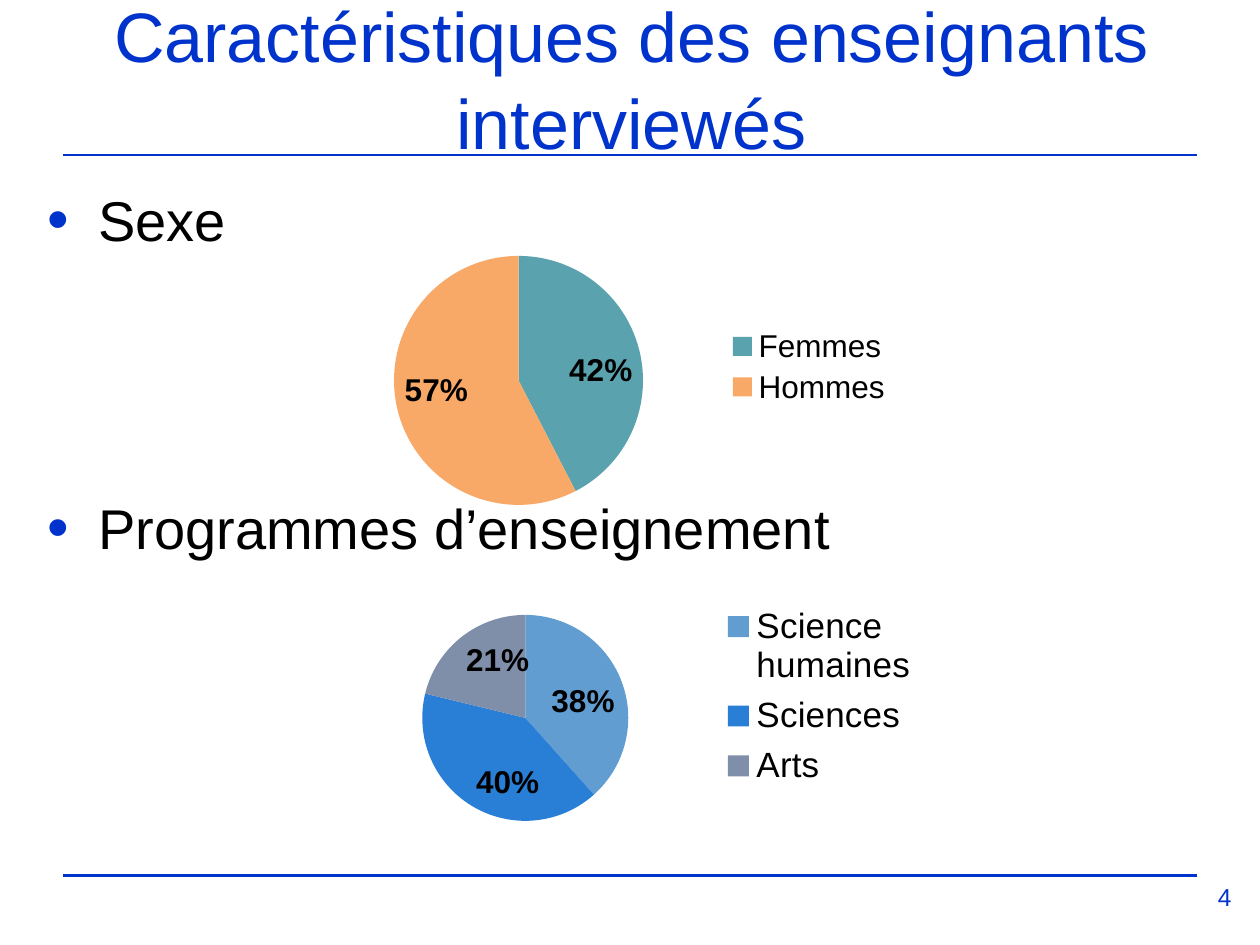
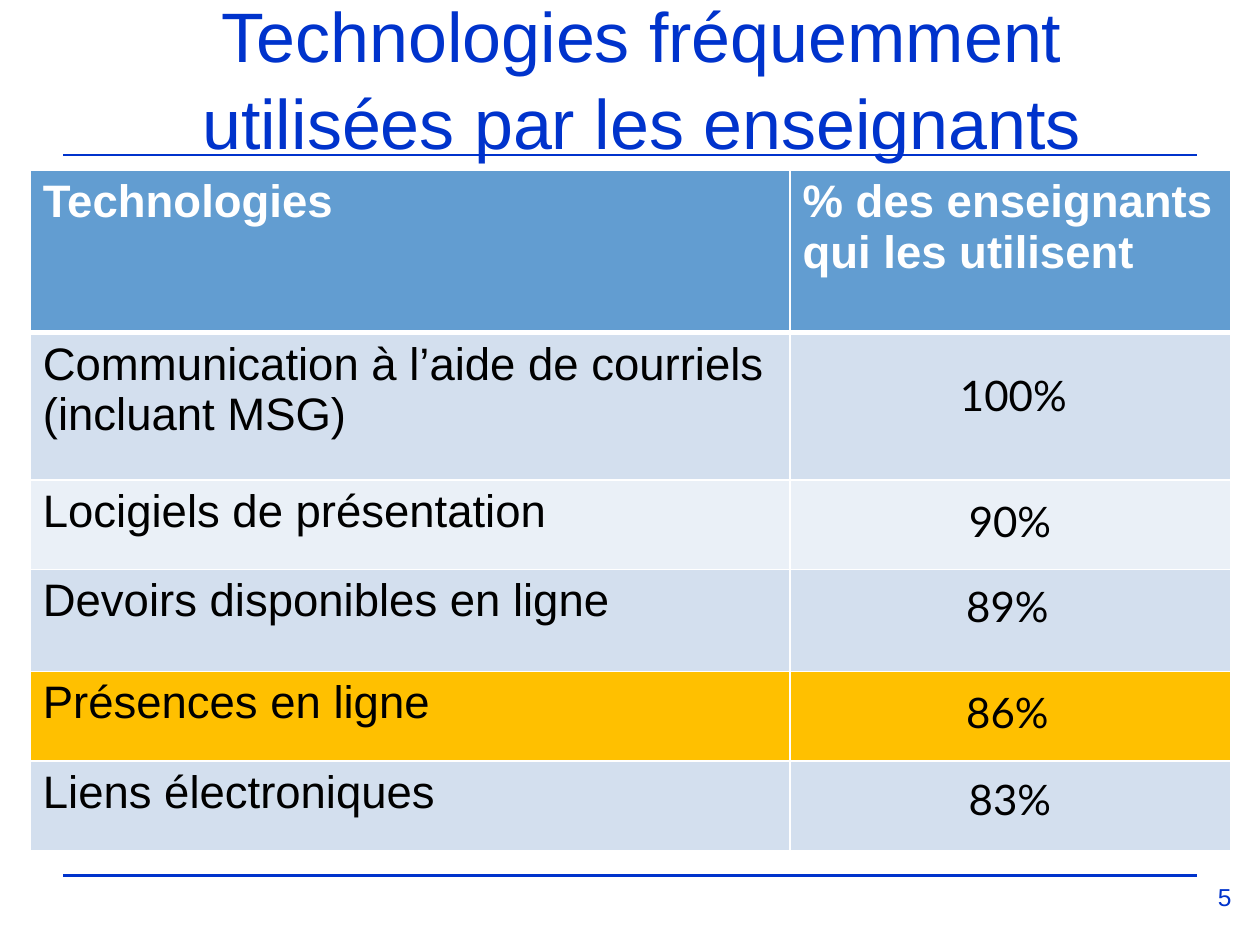
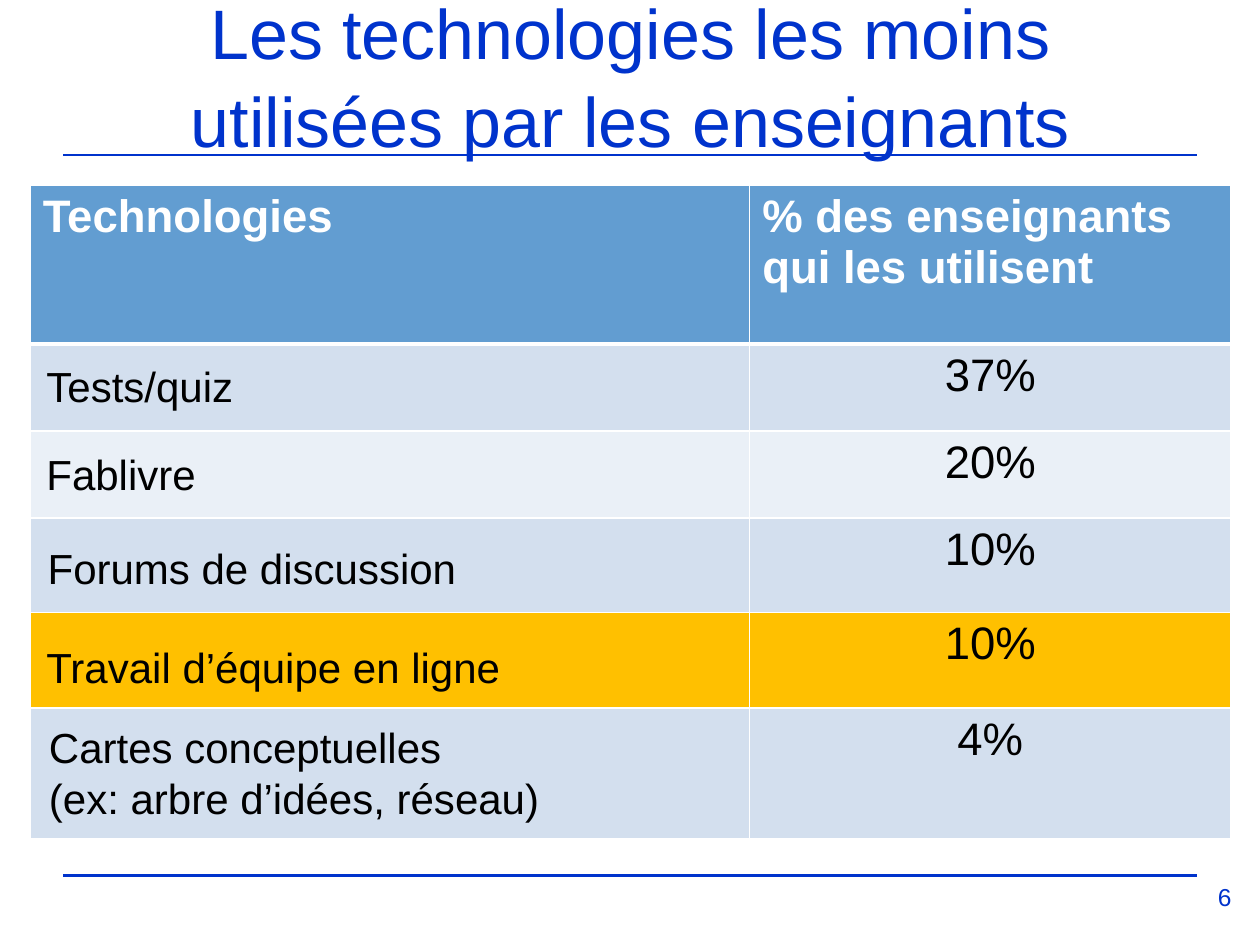
import pptx
import pptx.chart.data
import pptx.dml.color
import pptx.enum.chart
import pptx.enum.shapes
import pptx.enum.text
import pptx.oxml
import pptx.oxml.ns
import pptx.util
import lxml.etree

RGBColor = pptx.dml.color.RGBColor
Inches = pptx.util.Inches
Pt = pptx.util.Pt
qn = pptx.oxml.ns.qn
PP_ALIGN = pptx.enum.text.PP_ALIGN

ROYAL = RGBColor(0x00, 0x33, 0xCC)
BLACK = RGBColor(0x00, 0x00, 0x00)
WHITE = RGBColor(0xFF, 0xFF, 0xFF)
SKY = RGBColor(0x62, 0x9D, 0xD1)
BLUE = RGBColor(0x29, 0x7F, 0xD5)
SLATE = RGBColor(0x7F, 0x8F, 0xA9)
TEAL = RGBColor(0x5A, 0xA2, 0xAE)
PEACH = RGBColor(0xF8, 0xA9, 0x68)
BAND = RGBColor(0xD3, 0xDF, 0xEE)
PALE = RGBColor(0xEA, 0xF0, 0xF7)
GOLD = RGBColor(0xFF, 0xC0, 0x00)

ROW_FILLS = [SKY, BAND, PALE, BAND, GOLD, BAND]
HEADINGS = ("Technologies", "% des enseignants qui les utilisent")
FIRST_NUMBER = 4


def write(paragraph, text, size, colour=BLACK, font="Arial", bold=False, align=None):
    run = paragraph.add_run()
    run.text = text
    run.font.size = Pt(size)
    run.font.name = font
    run.font.bold = bold
    run.font.color.rgb = colour
    if align is not None:
        paragraph.alignment = align


def set_layout(parent, index, shares, inner=False):
    for old in parent.findall(qn("c:layout")):
        parent.remove(old)
    layout = lxml.etree.Element(qn("c:layout"))
    manual = lxml.etree.SubElement(layout, qn("c:manualLayout"))
    settings = [("layoutTarget", "inner")] if inner else []
    settings += [("xMode", "edge"), ("yMode", "edge")]
    settings += zip("xywh", shares)
    for tag, value in settings:
        lxml.etree.SubElement(manual, qn("c:" + tag)).set("val", str(value))
    parent.insert(index, layout)


deck = pptx.Presentation()
deck.slide_width = Inches(10)
deck.slide_height = Inches(7.5)
W = deck.slide_width

# Titles and page numbers of all slides
titles = [
    (1, 0.51, 0.6, "Caractéristiques des enseignants interviewés"),
    (5, 0.59, 0.6, "Technologies fréquemment utilisées par les enseignants"),
    (5, 0.5, 0.58, "Les technologies les moins utilisées par les enseignants"),
]
slides = []
for number, (layout_index, left, top, heading) in enumerate(titles, FIRST_NUMBER):
    slide = deck.slides.add_slide(deck.slide_layouts[layout_index])
    slides.append(slide)
    title = slide.shapes.title
    title.left, title.top = Inches(left), Inches(top)
    title.width, title.height = int(W * 0.9), Inches(0.75)
    frame = title.text_frame
    frame.auto_size = pptx.enum.text.MSO_AUTO_SIZE.NONE
    frame.vertical_anchor = pptx.enum.text.MSO_ANCHOR.BOTTOM
    frame.paragraphs[0].line_spacing = 1.04
    write(frame.paragraphs[0], heading, 40, ROYAL, align=PP_ALIGN.CENTER)
    page = slide.shapes.add_textbox(Inches(9.44), Inches(6.95), Inches(0.56), Inches(0.42))
    page.text_frame.word_wrap = True
    write(page.text_frame.paragraphs[0], str(number), 14, ROYAL, align=PP_ALIGN.CENTER)

# Header and footer rules, kept on the slide master
for height in (6.95, 1.23):
    rule = slides[0].shapes.add_connector(
        pptx.enum.shapes.MSO_CONNECTOR.STRAIGHT,
        int(W * 0.05), Inches(height), int(W * 0.95), Inches(height))
    rule.line.color.rgb = ROYAL
    rule.line.width = Pt(1.5)
    lxml.etree.SubElement(rule._element.spPr, qn("a:effectLst"))
    deck.slide_master.shapes._spTree.append(rule._element)

# Slide 4: the two topics
topics = slides[0].placeholders[1]
topics.left, topics.top = Inches(0.28), Inches(1.37)
topics.width, topics.height = Inches(9.53), Inches(4.87)
frame = topics.text_frame
frame.auto_size = pptx.enum.text.MSO_AUTO_SIZE.NONE
frame.margin_top = Inches(0.1)
for topic, gap in (("Sexe", 0), ("Programmes d’enseignement", 138)):
    paragraph = frame.add_paragraph() if gap else frame.paragraphs[0]
    properties = paragraph._p.get_or_add_pPr()
    properties.set("marL", str(Inches(0.4)))
    properties.set("indent", str(-Inches(0.4)))
    bullet_colour = lxml.etree.SubElement(properties, qn("a:buClr"))
    lxml.etree.SubElement(bullet_colour, qn("a:srgbClr")).set("val", str(ROYAL))
    lxml.etree.SubElement(properties, qn("a:buSzPct")).set("val", "110000")
    lxml.etree.SubElement(properties, qn("a:buFont")).set("typeface", "Arial")
    lxml.etree.SubElement(properties, qn("a:buChar")).set("char", "•")
    paragraph.space_before = Pt(gap)
    write(paragraph, topic, 32)

# Slide 4: one pie per topic (plot and legend as shares of the chart)
pies = [
    (1.69, 18, [("Femmes", 0.42, TEAL), ("Hommes", 0.57, PEACH)],
     (0.15, 0.14, 0.37, 0.81), (0.63, 0.36, 0.27, 0.28)),
    (4.49, 20, [("Science humaines", 0.38, SKY), ("Sciences", 0.4, BLUE), ("Arts", 0.21, SLATE)],
     (0.19, 0.16, 0.31, 0.67), (0.63, 0.1, 0.3, 0.65)),
]
for top, legend_size, shares, plot_shares, legend_shares in pies:
    data = pptx.chart.data.CategoryChartData(number_format="0%")
    data.categories = [name for name, value, colour in shares]
    data.add_series("Series 1", [value for name, value, colour in shares])
    chart = slides[0].shapes.add_chart(
        pptx.enum.chart.XL_CHART_TYPE.PIE,
        Inches(2.32), Inches(top), Inches(5.36), Inches(2.44), data).chart
    chart.has_title = False
    chart.font.size = Pt(10)
    chart.font.name = "Cabin"
    chart.font.color.rgb = BLACK
    plot = chart.plots[0]
    plot.vary_by_categories = True
    for index, (name, value, colour) in enumerate(shares):
        wedge = plot.series[0].points[index].format
        wedge.fill.solid()
        wedge.fill.fore_color.rgb = colour
        wedge.line.fill.background()
    plot.has_data_labels = True
    labels = plot.data_labels
    labels.show_value = True
    labels.show_percentage = False
    labels.number_format = "0%"
    labels.number_format_is_linked = False
    labels.position = pptx.enum.chart.XL_LABEL_POSITION.INSIDE_END
    chart.has_legend = True
    legend = chart.legend
    legend.position = pptx.enum.chart.XL_LEGEND_POSITION.RIGHT
    legend.include_in_layout = False
    for font, size, bold in ((labels.font, 18, True), (legend.font, legend_size, False)):
        font.size = Pt(size)
        font.name = "Arial"
        font.bold = bold
        font.color.rgb = BLACK
    set_layout(chart._chartSpace.chart.plotArea, 0, plot_shares, inner=True)
    set_layout(legend._element, 1, legend_shares)

# Slides 5 and 6: tables, each with one column written in its cells
tables = [
    (slides[1], 1.35, (6.03, 3.5), (1.29, 1.17, 0.71, 0.81, 0.71, 0.71), 0, None,
     ["Communication à l’aide de courriels (incluant MSG)", "Locigiels de présentation",
      "Devoirs disponibles en ligne", "Présences en ligne", "Liens électroniques"]),
    (slides[2], 1.47, (5.71, 3.82), (1.26, 0.69, 0.69, 0.75, 0.76, 1.04), 1, PP_ALIGN.CENTER,
     ["37%", "20%", "10%", "10%", "4%"]),
]
for slide, top, widths, heights, text_column, align, entries in tables:
    table = slide.shapes.add_table(
        len(heights), len(widths), Inches(0.24), Inches(top),
        Inches(sum(widths)), Inches(sum(heights))).table
    for column, width in zip(table.columns, widths):
        column.width = Inches(width)
    for r, height in enumerate(heights):
        table.rows[r].height = Inches(height)
        for c in range(len(widths)):
            cell = table.cell(r, c)
            cell.fill.solid()
            cell.fill.fore_color.rgb = ROW_FILLS[r]
            for position, side in enumerate(("lnL", "lnR", "lnT", "lnB")):
                thick = (r, side) in ((0, "lnB"), (1, "lnT"))
                border = lxml.etree.Element(qn("a:" + side), w=str(Pt(3 if thick else 1)))
                solid = lxml.etree.SubElement(border, qn("a:solidFill"))
                lxml.etree.SubElement(solid, qn("a:srgbClr")).set("val", str(WHITE))
                cell._tc.get_or_add_tcPr().insert(position, border)
            paragraph = cell.text_frame.paragraphs[0]
            if r == 0:
                write(paragraph, HEADINGS[c], 26, WHITE, bold=True)
            elif c == text_column:
                write(paragraph, entries[r - 1], 26, align=align)

# Slides 5 and 6: the other column, laid over the tables
overlays = [
    (slides[1], "Lato", [
        (7.52, 2.88, 1.29, 0.5, ["100%"]),
        (7.59, 3.88, 1.15, 0.5, ["90%"]),
        (7.57, 4.56, 1.18, 0.5, ["89%"]),
        (7.57, 5.4, 1.02, 0.5, ["86%"]),
        (7.59, 6.09, 1.1, 0.5, ["83%"]),
    ]),
    (slides[2], "Arial", [
        (0.27, 2.81, 2.44, 0.91, ["Tests/quiz"]),
        (0.27, 3.51, 2.52, 0.94, ["Fablivre"]),
        (0.28, 4.26, 3.78, 0.91, ["Forums de discussion"]),
        (0.27, 5.04, 3.86, 0.91, ["Travail d’équipe en ligne"]),
        (0.29, 5.68, 4.09, 1.31, ["Cartes conceptuelles", "(ex: arbre d’idées, réseau)"]),
    ]),
]
for slide, font, notes in overlays:
    for left, top, width, height, lines in notes:
        frame = slide.shapes.add_textbox(
            Inches(left), Inches(top), Inches(width), Inches(height)).text_frame
        frame.word_wrap = True
        for index, line in enumerate(lines):
            paragraph = frame.add_paragraph() if index else frame.paragraphs[0]
            write(paragraph, line, 24, font=font)

deck.save("out.pptx")
